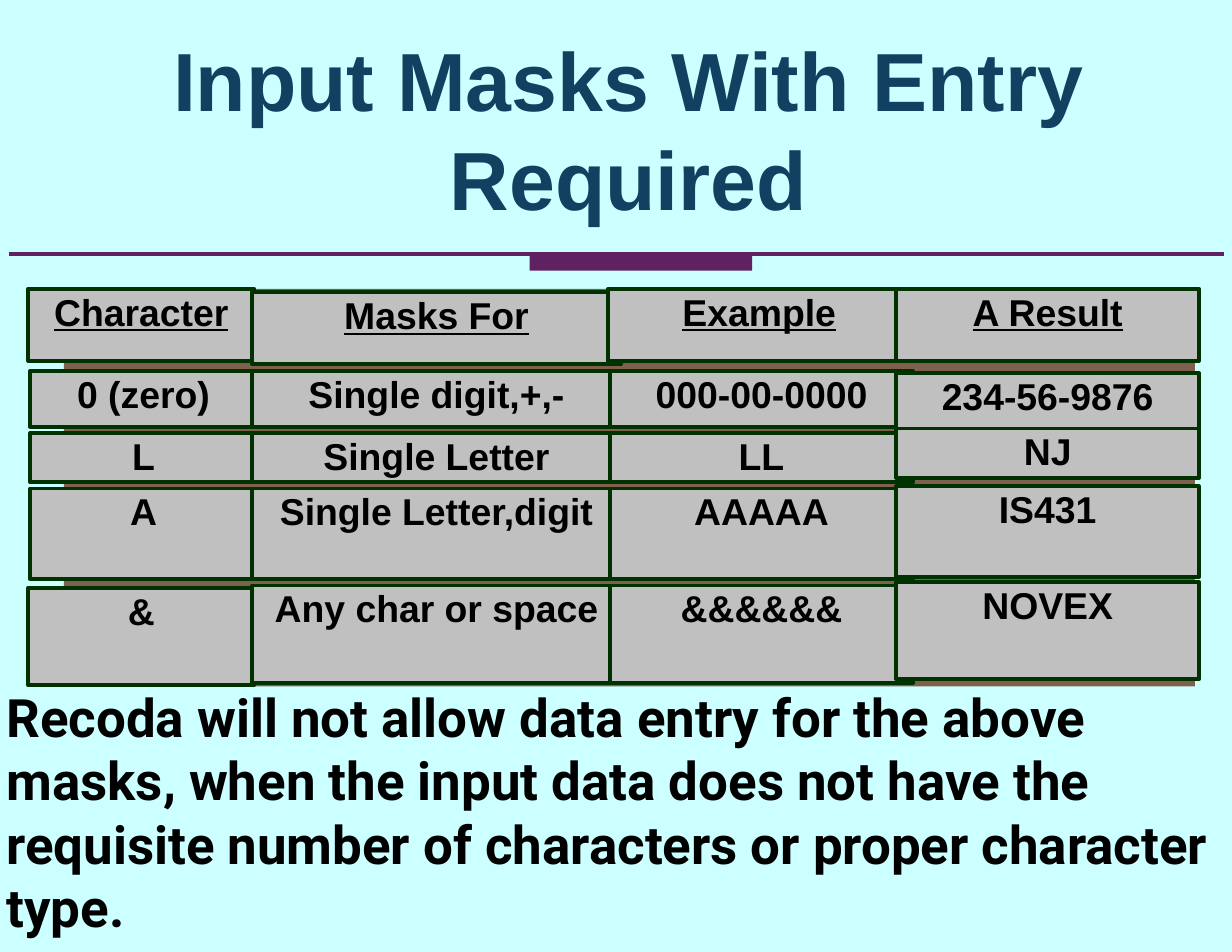
from pptx import Presentation
from pptx.dml.color import RGBColor
from pptx.enum.shapes import MSO_CONNECTOR, MSO_SHAPE
from pptx.enum.text import MSO_ANCHOR, PP_ALIGN
from pptx.oxml.ns import qn
from pptx.util import Cm, Pt
from lxml import etree

RECTANGLE = MSO_SHAPE.RECTANGLE
STRAIGHT = MSO_CONNECTOR.STRAIGHT
TOP, MIDDLE = MSO_ANCHOR.TOP, MSO_ANCHOR.MIDDLE
LEFT, CENTER = PP_ALIGN.LEFT, PP_ALIGN.CENTER

BACKGROUND = RGBColor(0xCC, 0xFF, 0xFF)
TITLE_BLUE = RGBColor(0x10, 0x41, 0x60)
PURPLE = RGBColor(0x60, 0x21, 0x62)
BROWN = RGBColor(0x7F, 0x60, 0x4F)
GRAY = RGBColor(0xC0, 0xC0, 0xC0)
DARK_GREEN = RGBColor(0x00, 0x31, 0x00)
BLACK = RGBColor(0x00, 0x00, 0x00)

LINE_WIDTH = Pt(2.5)

COLUMNS = [(0.05, 5.13), (5.08, 8.36), (13.2, 6.86), (19.69, 6.86)]
ROWS = [
    (0, 1.63, ["Character", "Masks For", "Example", "A Result"]),
    (1.86, 1.27, ["0 (zero)", "Single digit,+,-", "000-00-0000", "234-56-9876"]),
    (3.27, 1.12, ["L", "Single Letter", "LL", "NJ"]),
    (4.53, 2.06, ["A", "Single Letter,digit", "AAAAA", "IS431"]),
    (6.73, 2.21, ["&", "Any char or space", "&&&&&&", "NOVEX"]),
]
CELL_SHIFTS = {
    (0, 0): (-0.05, 0),
    (0, 1): (0, 0.08),
    (0, 2): (-0.05, 0),
    (1, 3): (0, 0.05),
    (2, 3): (0, -0.1),
    (3, 3): (0, -0.05),
    (4, 0): (-0.05, 0.05),
    (4, 3): (0, -0.08),
}


def write_text(shape, text, size, font_name, color, alignment, anchor=TOP):
    frame = shape.text_frame
    frame.word_wrap = True
    frame.vertical_anchor = anchor
    frame.margin_left = frame.margin_right = 0
    frame.margin_top = frame.margin_bottom = 0
    paragraph = frame.paragraphs[0]
    paragraph.alignment = alignment
    run = paragraph.add_run()
    run.text = text
    run.font.size = Pt(size)
    run.font.name = font_name
    run.font.bold = True
    run.font.color.rgb = color
    return run


def add_rectangle(slide, left, top, width, height, fill):
    shape = slide.shapes.add_shape(
        RECTANGLE, Cm(left), Cm(top), Cm(width), Cm(height)
    )
    shape.shadow.inherit = False
    shape.fill.solid()
    shape.fill.fore_color.rgb = fill
    shape.line.fill.background()
    return shape


def add_title(slide, left, top, width, height):
    box = slide.shapes.add_textbox(Cm(left), Cm(top), Cm(width), Cm(height))
    write_text(box, "Input Masks With Entry Required", 53, "Arial", TITLE_BLUE,
               CENTER, MIDDLE)


def add_divider(slide, left, top, width):
    add_rectangle(slide, left + 11.81, top + 0.02, 5.05, 0.36, PURPLE)
    line = slide.shapes.add_connector(
        STRAIGHT, Cm(left), Cm(top), Cm(left + width), Cm(top)
    )
    line.line.color.rgb = PURPLE
    line.line.width = LINE_WIDTH
    etree.SubElement(line._element.spPr, qn("a:effectLst"))


def add_mask_grid(slide, left, top, width, height):
    add_rectangle(slide, left + 0.81, top, width, height, BROWN)
    for row, (row_top, row_height, texts) in enumerate(ROWS):
        for column, (column_left, column_width) in enumerate(COLUMNS):
            shift_x, shift_y = CELL_SHIFTS.get((row, column), (0, 0))
            cell = add_rectangle(
                slide, left + column_left + shift_x, top + row_top + shift_y,
                column_width, row_height, GRAY,
            )
            cell.line.color.rgb = DARK_GREEN
            cell.line.width = LINE_WIDTH
            run = write_text(cell, texts[column], 24, "Arial", BLACK, CENTER)
            if row == 0:
                run.font.underline = True


def add_note(slide, left, top, width, height):
    box = slide.shapes.add_textbox(Cm(left), Cm(top), Cm(width), Cm(height))
    write_text(
        box,
        "Recoda will not allow data entry for the above masks, when the input "
        "data does not have the requisite number of characters or proper "
        "character type.",
        34, "Roboto", BLACK, LEFT,
    )


def main():
    presentation = Presentation()
    presentation.slide_width = Cm(27.94)
    presentation.slide_height = Cm(21.59)
    slide = presentation.slides.add_slide(presentation.slide_layouts[6])
    slide.background.fill.solid()
    slide.background.fill.fore_color.rgb = BACKGROUND
    add_divider(slide, 0.2, 5.76, 27.56)
    add_title(slide, 0, 0, 28.52, 5.79)
    add_mask_grid(slide, 0.64, 6.55, 25.65, 9.02)
    add_note(slide, 0.15, 15.52, 27.79, 6.07)
    presentation.save("out.pptx")


if __name__ == "__main__":
    main()
